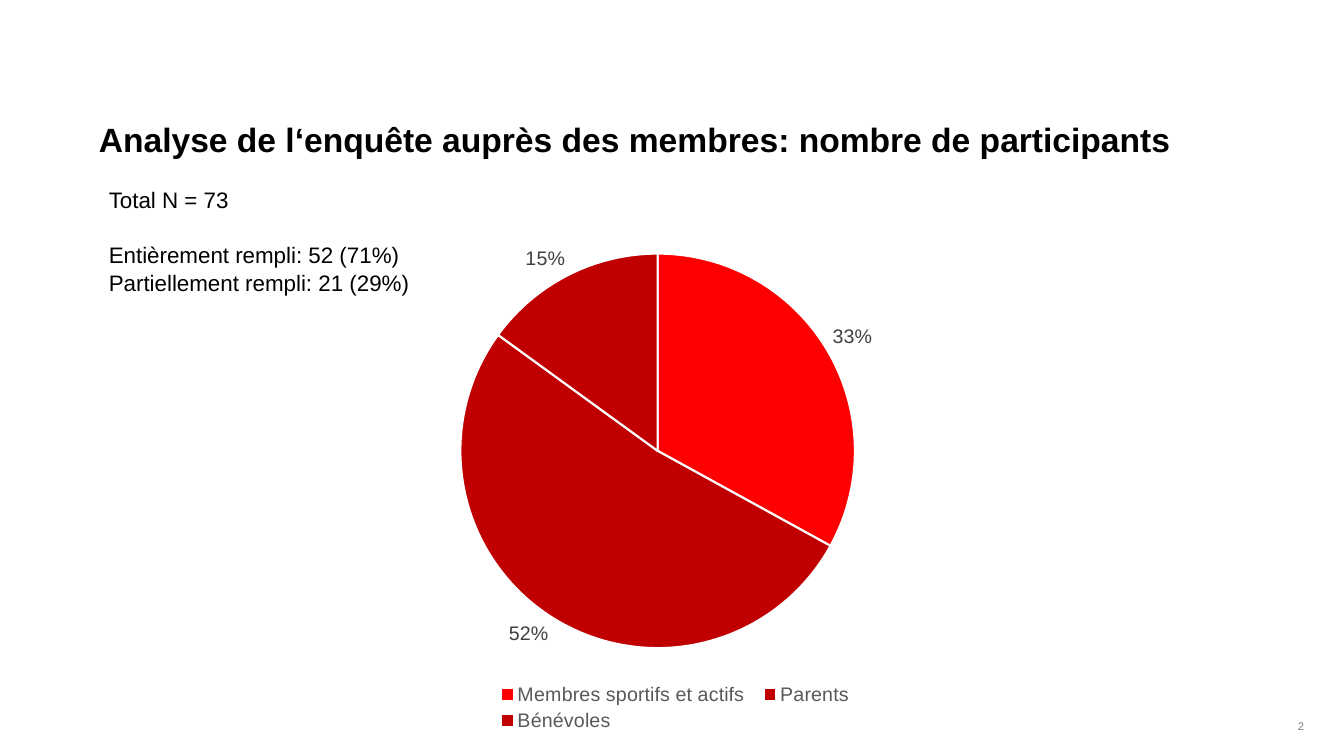
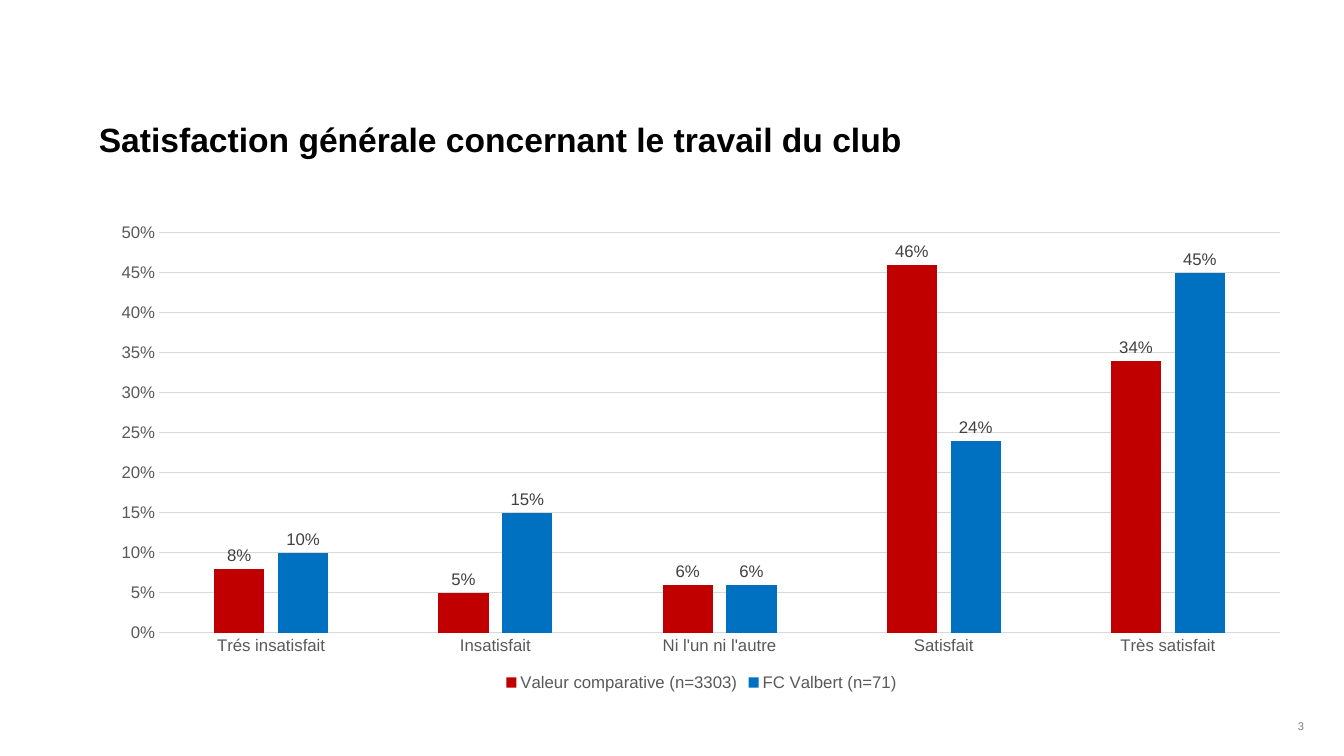
from dataclasses import dataclass

from lxml import etree
from pptx import Presentation
from pptx.chart.data import CategoryChartData
from pptx.dml.color import RGBColor
from pptx.enum.chart import XL_CHART_TYPE, XL_LABEL_POSITION, XL_LEGEND_POSITION, XL_TICK_MARK
from pptx.enum.text import PP_ALIGN
from pptx.oxml.ns import qn
from pptx.util import Pt

PIE = XL_CHART_TYPE.PIE
COLUMNS = XL_CHART_TYPE.COLUMN_CLUSTERED
OUTSIDE_END = XL_LABEL_POSITION.OUTSIDE_END
LEGEND_BOTTOM = XL_LEGEND_POSITION.BOTTOM
NO_TICK = XL_TICK_MARK.NONE
LEFT, RIGHT = PP_ALIGN.LEFT, PP_ALIGN.RIGHT


@dataclass(frozen=True)
class Theme:
    font: str = "Arial"
    text: str = "000000"
    page_number: str = "808080"
    label: str = "404040"
    axis: str = "595959"
    grid: str = "D9D9D9"
    background: str = "FFFFFF"
    bright_red: str = "FF0000"
    dark_red: str = "C00000"
    blue: str = "0070C0"
    title_size: float = 24
    body_size: float = 16
    pie_size: float = 14
    column_size: float = 12
    number_size: float = 8


THEME = Theme()
SLIDE_SIZE = (960, 540)
MARGIN_LEFT = 70.6
CONTENT_WIDTH = 861


def style_font(font, size, color, bold=False):
    font.name = THEME.font
    font.size = Pt(size)
    font.bold = bold
    font.color.rgb = RGBColor.from_string(color)


def fill_solid(fill, color):
    fill.solid()
    fill.fore_color.rgb = RGBColor.from_string(color)


def style_line(line, color, width):
    fill_solid(line.fill, color)
    line.width = Pt(width)


# Text
def add_text(slide, text, box, size=THEME.body_size, color=THEME.text, bold=False,
             align=LEFT, insets=(0, 0), line_spacing=None, gap_before=None):
    """Write one paragraph per line; gap_before maps a line index to its space before."""
    frame = slide.shapes.add_textbox(*map(Pt, box)).text_frame
    frame.word_wrap = True
    frame.margin_left = frame.margin_right = Pt(insets[0])
    frame.margin_top = frame.margin_bottom = Pt(insets[1])
    frame.text = text
    for index, paragraph in enumerate(frame.paragraphs):
        paragraph.alignment = align
        paragraph.line_spacing = line_spacing
        paragraph.space_before = Pt((gap_before or {}).get(index, 0))
        style_font(paragraph.font, size, color, bold)


def add_titled_slide(presentation, title, number):
    slide = presentation.slides.add_slide(presentation.slide_layouts[6])
    fill_solid(slide.background.fill, THEME.background)
    add_text(slide, title, (MARGIN_LEFT, 85, CONTENT_WIDTH, 51),
             size=THEME.title_size, bold=True)
    add_text(slide, str(number), (731.5, 514, 200, 24), size=THEME.number_size,
             color=THEME.page_number, align=RIGHT)
    return slide


# Charts
def set_layout(parent, position, fractions, inner=False):
    """Place a chart part by its x, y, width and height as fractions of the chart."""
    for old_layout in parent.findall(qn("c:layout")):
        parent.remove(old_layout)
    layout = etree.Element(qn("c:layout"))
    manual = etree.SubElement(layout, qn("c:manualLayout"))
    settings = [("layoutTarget", "inner")] if inner else []
    settings += [("xMode", "edge"), ("yMode", "edge"), *zip("xywh", map(str, fractions))]
    for name, value in settings:
        etree.SubElement(manual, qn(f"c:{name}")).set("val", value)
    parent.insert(position, layout)


def add_percent_chart(slide, kind, box, categories, series, size, plot_area):
    data = CategoryChartData(number_format="0%")
    data.categories = categories
    for name, values in series:
        data.add_series(name, values)
    chart = slide.shapes.add_chart(kind, *map(Pt, box), data).chart
    chart.has_title = False
    style_font(chart.font, size, THEME.text)

    chart.has_legend = True
    chart.legend.position = LEGEND_BOTTOM
    chart.legend.include_in_layout = False
    style_font(chart.legend.font, size, THEME.axis)

    plot = chart.plots[0]
    plot.has_data_labels = True
    labels = plot.data_labels
    labels.show_value = True
    labels.show_percentage = False
    labels.position = OUTSIDE_END
    labels.number_format = "0%"
    labels.number_format_is_linked = False
    style_font(labels.font, size, THEME.label)
    set_layout(chart.element.find(".//" + qn("c:plotArea")), 0, plot_area, inner=True)
    return chart


def add_pie(slide, box, categories, values, colors):
    chart = add_percent_chart(slide, PIE, box, categories, [("Series 1", values)],
                              THEME.pie_size, (0.2, 0.06, 0.56, 0.77))
    chart.plots[0].vary_by_categories = True
    for index, color in enumerate(colors):
        slice_format = chart.plots[0].series[0].points[index].format
        fill_solid(slice_format.fill, color)
        style_line(slice_format.line, THEME.background, 1.5)
    set_layout(chart.element.find(".//" + qn("c:legend")), 1, (0.24, 0.89, 0.53, 0.11))


def add_columns(slide, box, categories, series, colors):
    chart = add_percent_chart(slide, COLUMNS, box, categories, series,
                              THEME.column_size, (0.05, 0.04, 0.93, 0.83))
    plot = chart.plots[0]
    plot.vary_by_categories = False
    plot.gap_width = 219
    plot.overlap = -27
    for column, color in zip(plot.series, colors):
        fill_solid(column.format.fill, color)

    for axis in (chart.category_axis, chart.value_axis):
        axis.major_tick_mark = axis.minor_tick_mark = NO_TICK
        style_font(axis.tick_labels.font, THEME.column_size, THEME.axis)
    style_line(chart.category_axis.format.line, THEME.grid, 0.75)

    value_axis = chart.value_axis
    value_axis.minimum_scale, value_axis.maximum_scale = 0, 0.5
    value_axis.major_unit = 0.05
    value_axis.format.line.fill.background()
    value_axis.tick_labels.number_format = "0%"
    value_axis.tick_labels.number_format_is_linked = False
    style_line(value_axis.major_gridlines.format.line, THEME.grid, 0.75)


def main():
    presentation = Presentation()
    presentation.slide_width, presentation.slide_height = map(Pt, SLIDE_SIZE)

    # Number of participants
    slide = add_titled_slide(
        presentation, "Analyse de l‘enquête auprès des membres: nombre de participants", 2)
    add_pie(slide, (228.2, 159, 503.3, 366.5),
            ["Membres sportifs et actifs", "Parents", "Bénévoles"],
            [0.33, 0.52, 0.15],
            [THEME.bright_red, THEME.dark_red, THEME.dark_red])
    add_text(slide, "Total N = 73\nEntièrement rempli: 52 (71%)\nPartiellement rempli: 21 (29%)",
             (MARGIN_LEFT, 128.2, 246.2, 85), insets=(7.2, 3.6),
             line_spacing=1.05, gap_before={1: 19.3})

    # General satisfaction
    slide = add_titled_slide(
        presentation, "Satisfaction générale concernant le travail du club", 3)
    add_columns(slide, (MARGIN_LEFT, 152.6, CONTENT_WIDTH, 344.2),
                ["Trés insatisfait", "Insatisfait", "Ni l'un ni l'autre",
                 "Satisfait", "Très satisfait"],
                [("Valeur comparative (n=3303)", [0.08, 0.05, 0.06, 0.46, 0.34]),
                 ("FC Valbert (n=71)", [0.1, 0.15, 0.06, 0.24, 0.45])],
                [THEME.dark_red, THEME.blue])

    presentation.save("out.pptx")


if __name__ == "__main__":
    main()
